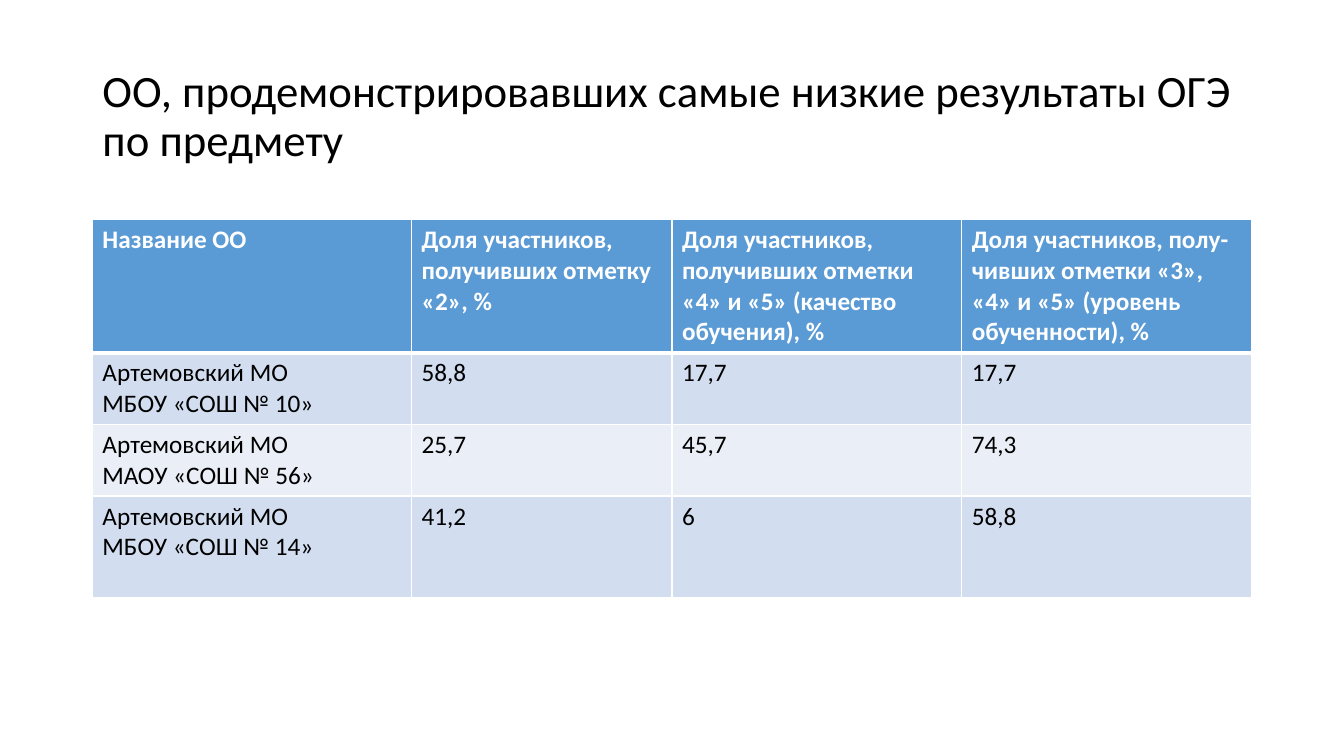
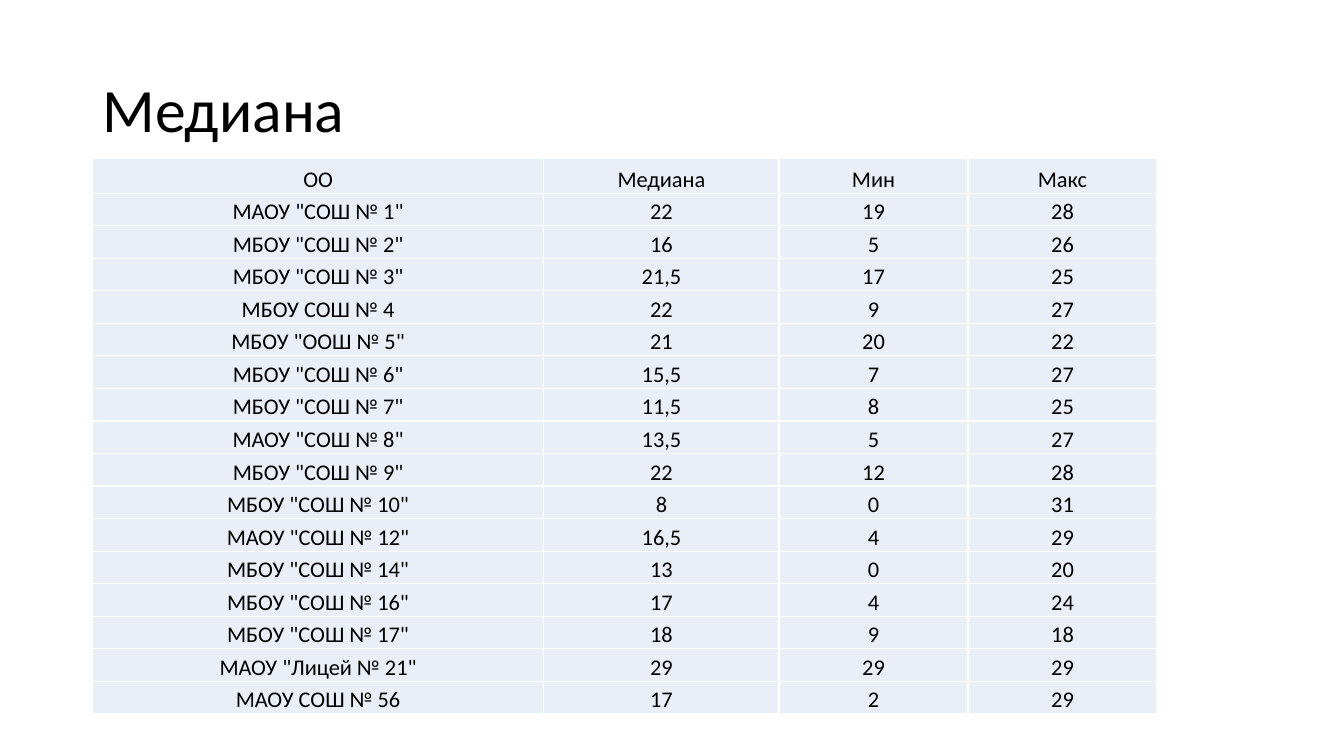
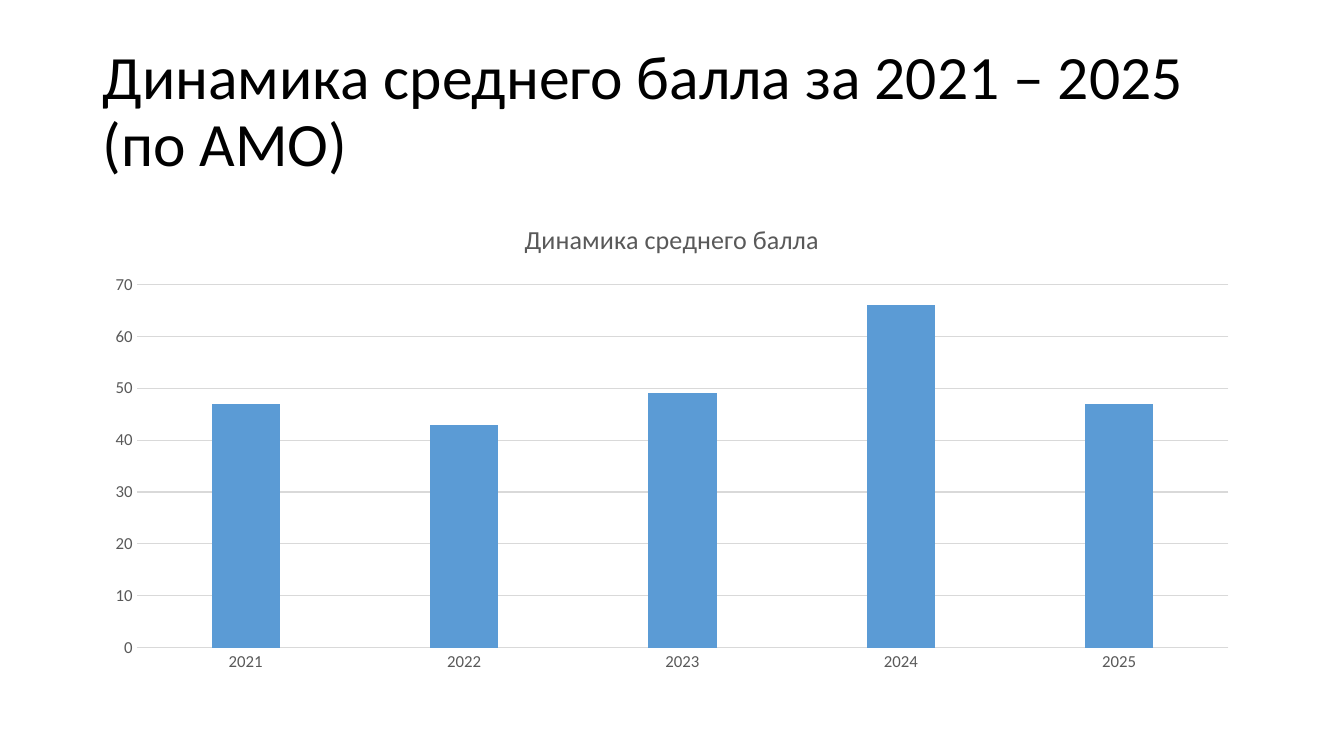
from lxml.etree import SubElement
from pptx import Presentation
from pptx.chart.data import CategoryChartData
from pptx.dml.color import RGBColor
from pptx.enum.chart import XL_CHART_TYPE as CHART, XL_TICK_MARK as TICK
from pptx.enum.text import MSO_ANCHOR as ANCHOR, MSO_AUTO_SIZE as AUTOSIZE, PP_ALIGN as ALIGN
from pptx.oxml import parse_xml
from pptx.oxml.ns import nsdecls, qn
from pptx.util import Emu, Pt

PX = 9525
FONT = "Calibri"
LEFT, WIDTH = 88, 1104
COLORS = {
    "text": "000000",
    "white": "FFFFFF",
    "accent": "5B9BD5",
    "band": "D2DEEF",
    "pale": "EAEFF7",
    "label": "595959",
    "grid": "D9D9D9",
}

LOW_RESULTS = [
    ("Название ОО",
     "Доля участников, получивших отметку «2», %",
     "Доля участников, получивших отметки «4» и «5» (качество обучения), %",
     "Доля участников, полу-чивших отметки «3», «4» и «5» (уровень обученности), %"),
    ("Артемовский МО\nМБОУ «СОШ № 10»", "58,8", "17,7", "17,7"),
    ("Артемовский МО\nМАОУ «СОШ № 56»", "25,7", "45,7", "74,3"),
    ("Артемовский МО\nМБОУ «СОШ № 14»", "41,2", "6", "58,8"),
]
MEDIANS = [
    ("ОО", "Медиана", "Мин", "Макс"),
    ('МАОУ "СОШ № 1"', "22", "19", "28"),
    ('МБОУ "СОШ № 2"', "16", "5", "26"),
    ('МБОУ "СОШ № 3"', "21,5", "17", "25"),
    ("МБОУ СОШ № 4", "22", "9", "27"),
    ('МБОУ "ООШ № 5"', "21", "20", "22"),
    ('МБОУ "СОШ № 6"', "15,5", "7", "27"),
    ('МБОУ "СОШ № 7"', "11,5", "8", "25"),
    ('МАОУ "СОШ № 8"', "13,5", "5", "27"),
    ('МБОУ "СОШ № 9"', "22", "12", "28"),
    ('МБОУ "СОШ № 10"', "8", "0", "31"),
    ('МАОУ "СОШ № 12"', "16,5", "4", "29"),
    ('МБОУ "СОШ № 14"', "13", "0", "20"),
    ('МБОУ "СОШ № 16"', "17", "4", "24"),
    ('МБОУ "СОШ № 17"', "18", "9", "18"),
    ('МАОУ "Лицей № 21"', "29", "29", "29"),
    ("МАОУ СОШ № 56", "17", "2", "29"),
]
SCORES = {"2021": 47, "2022": 43, "2023": 49, "2024": 66, "2025": 47}


def px(*lengths):
    return [Emu(n * PX) for n in lengths]


def rgb(name):
    return RGBColor.from_string(COLORS[name])


def style_font(font, size, color="text", bold=False):
    font.name, font.size, font.bold = FONT, Pt(size), bold
    font.color.rgb = rgb(color)


def put_text(tf, text, size=18, color="text", bold=False, align=ALIGN.LEFT, spacing=None):
    tf.text = text
    for p in tf.paragraphs:
        p.alignment, p.line_spacing = align, spacing
        for r in p.runs:
            style_font(r.font, size, color, bold)


def add_slide(prs, title, size=44, top=38, height=139):
    s = prs.slides.add_slide(prs.slide_layouts[5])
    sp = s.shapes.title
    sp.left, sp.top, sp.width, sp.height = px(LEFT, top, WIDTH, height)
    tf = sp.text_frame
    tf.word_wrap, tf.auto_size, tf.vertical_anchor = True, AUTOSIZE.NONE, ANCHOR.MIDDLE
    put_text(tf, title, size=size, spacing=0.9)
    return s


def set_borders(cell, top=1, bottom=1):
    tc_pr = cell._tc.get_or_add_tcPr()
    sides = {"lnL": 1, "lnR": 1, "lnT": top, "lnB": bottom}
    for i, (side, width) in enumerate(sides.items()):
        ln = parse_xml(f'<a:{side} {nsdecls("a")} w="{Pt(width)}"/>')
        fill = SubElement(ln, qn("a:solidFill"))
        SubElement(fill, qn("a:srgbClr"), val=COLORS["white"])
        tc_pr.insert(i, ln)


def add_table(s, rows, top, widths, heights, header=False, compact=False):
    """Draw a table, with a coloured header and bands or with compact centred rows."""
    frame = s.shapes.add_table(len(rows), len(widths), *px(LEFT, top, sum(widths), sum(heights)))
    table = frame.table
    table.first_row, table.horz_banding = header, False
    for column, width in zip(table.columns, px(*widths)):
        column.width = width
    for row, height in zip(table.rows, px(*heights)):
        row.height = height
    for i, values in enumerate(rows):
        is_head = header and i == 0
        fill = "accent" if is_head else "band" if header and i % 2 else "pale"
        for j, text in enumerate(values):
            cell = table.cell(i, j)
            cell.fill.solid()
            cell.fill.fore_color.rgb = rgb(fill)
            set_borders(cell, top=3 if header and i == 1 else 1, bottom=3 if is_head else 1)
            if compact:
                cell.vertical_anchor = ANCHOR.BOTTOM
                cell.margin_left, cell.margin_top, cell.margin_right, cell.margin_bottom = px(1, 1, 1, 0)
            put_text(cell.text_frame, text, size=16 if compact else 18,
                     color="white" if is_head else "text", bold=is_head,
                     align=ALIGN.CENTER if compact else ALIGN.LEFT)


def style_line(line, color):
    line.color.rgb, line.width = rgb(color), Pt(0.75)


def add_column_chart(s, title, scores, top, height):
    data = CategoryChartData()
    data.categories = list(scores)
    data.add_series("Series 1", scores.values())
    chart = s.shapes.add_chart(CHART.COLUMN_CLUSTERED, *px(LEFT, top, WIDTH, height), data).chart
    style_font(chart.font, 10)
    chart.has_legend = False
    put_text(chart.chart_title.text_frame, title, size=18.6, color="label", align=ALIGN.CENTER)
    plot = chart.plots[0]
    plot.gap_width, plot.overlap, plot.vary_by_categories = 219, -27, False
    fill = plot.series[0].format.fill
    fill.solid()
    fill.fore_color.rgb = rgb("accent")
    for axis in (chart.category_axis, chart.value_axis):
        axis.major_tick_mark = axis.minor_tick_mark = TICK.NONE
        style_font(axis.tick_labels.font, 12, "label")
    style_line(chart.category_axis.format.line, "grid")
    value_axis = chart.value_axis
    value_axis.minimum_scale, value_axis.maximum_scale, value_axis.major_unit = 0, 70, 10
    value_axis.format.line.fill.background()
    style_line(value_axis.major_gridlines.format.line, "grid")


def main():
    prs = Presentation()
    prs.slide_width, prs.slide_height = px(1280, 720)

    s = add_slide(prs, "ОО, продемонстрировавших самые низкие результаты ОГЭ по предмету",
                  size=32, top=72, height=80)
    add_table(s, LOW_RESULTS, 209, [304, 248, 276, 276], [127, 68, 68, 97], header=True)

    s = add_slide(prs, "Медиана")
    add_table(s, MEDIANS, 151, [430, 224, 180, 180],
              [33] + [31] * (len(MEDIANS) - 1), compact=True)

    s = add_slide(prs, "Динамика среднего балла за 2021 – 2025 (по АМО)")
    add_column_chart(s, "Динамика среднего балла", SCORES, top=192, height=457)

    prs.save("out.pptx")


if __name__ == "__main__":
    main()
